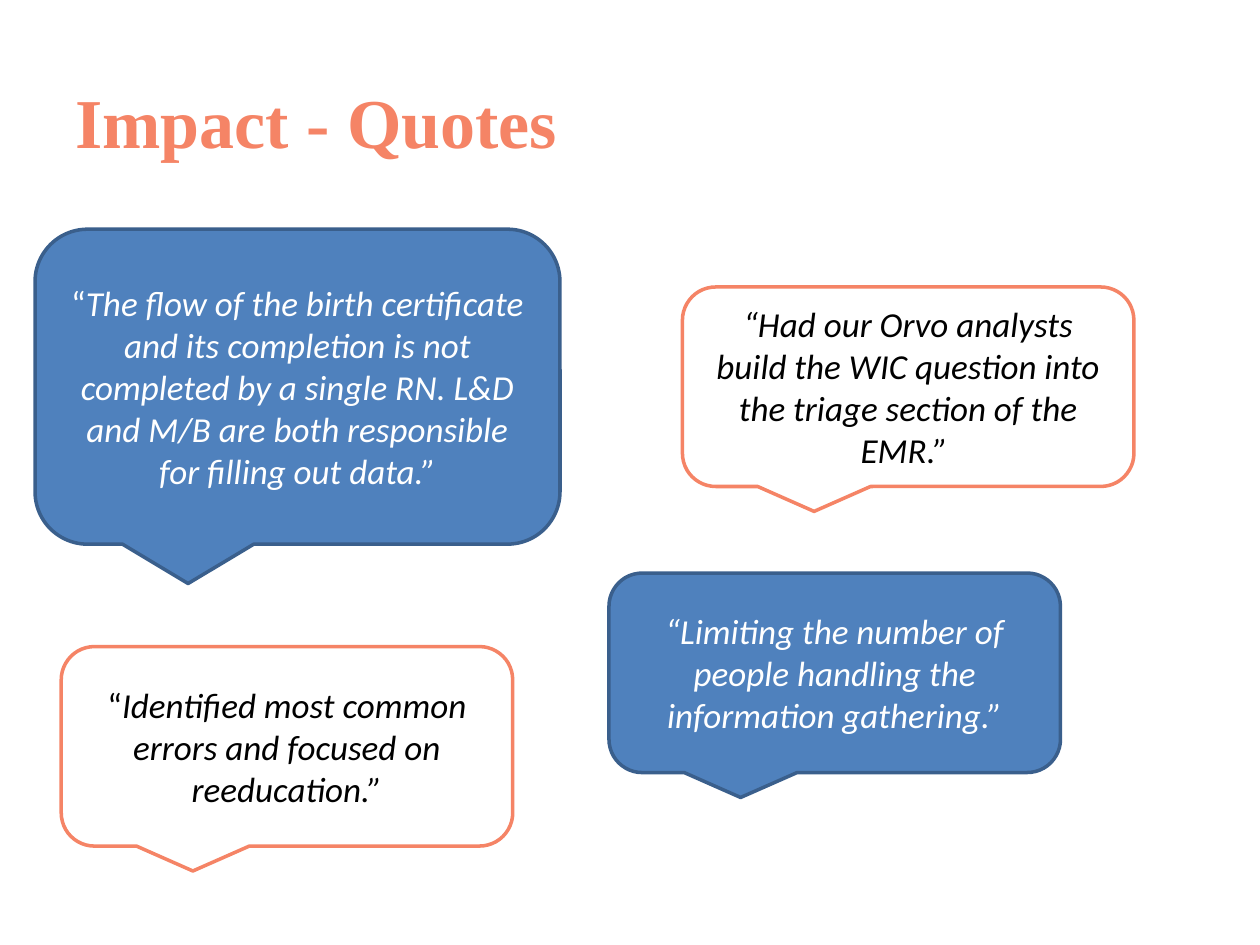
from pptx import Presentation
from pptx.dml.color import RGBColor
from pptx.enum import shapes as sh, text as tx
from pptx.util import Pt

CORAL = "F58466"
PLAIN = ("FFFFFF", CORAL, "000000")
BLUE = ("4F81BD", "3A5F8C", "FFFFFF")
SMALL = (258, 114)
LARGE = (300, 180)

QUOTES = [
    ((35, 369.5), SMALL, PLAIN, "“",
     "Identified most common errors and focused on reeducation.”"),
    ((348, 327.5), SMALL, BLUE, "",
     "“Limiting the number of people handling the information gathering.”"),
    ((390, 164), SMALL, PLAIN, "",
     "“Had our Orvo analysts build the WIC question into the triage section of the EMR.” "),
    ((20, 131), LARGE, BLUE, "“",
     "The flow of the birth certificate and its completion is not completed by a "
     "single RN. L&D and M/B are both responsible for filling out data.”"),
]


def paint(color, code):
    color.rgb = RGBColor.from_string(code)


def style(font, name, size, code):
    font.name = name
    font.size = Pt(size)
    paint(font.color, code)


def add_quote(slide, spot, size, look, mark, words):
    fill, edge, ink = look
    box = slide.shapes.add_shape(sh.MSO_SHAPE.ROUNDED_RECTANGULAR_CALLOUT,
                                 *map(Pt, spot + size))
    box.shadow.inherit = False
    box.fill.solid()
    paint(box.fill.fore_color, fill)
    paint(box.line.color, edge)
    box.line.width = Pt(2)
    frame = box.text_frame
    frame.word_wrap = True
    frame.vertical_anchor = tx.MSO_ANCHOR.MIDDLE
    para = frame.paragraphs[0]
    para.alignment = tx.PP_ALIGN.CENTER
    style(para.font, "Calibri", 20, ink)
    if mark:
        para.add_run().text = mark
    run = para.add_run()
    run.text = words
    run.font.italic = True


def main():
    deck = Presentation()
    deck.slide_width, deck.slide_height = Pt(720), Pt(540)
    slide = deck.slides.add_slide(deck.slide_layouts[5])
    title = slide.shapes.title
    title.left, title.top, title.width, title.height = map(Pt, (36, 24, 648, 90))
    title.text_frame.text = "Impact - Quotes"
    title.text_frame.vertical_anchor = tx.MSO_ANCHOR.MIDDLE
    para = title.text_frame.paragraphs[0]
    para.alignment = tx.PP_ALIGN.LEFT
    style(para.font, "Times New Roman", 40, CORAL)
    para.font.bold = True
    for quote in QUOTES:
        add_quote(slide, *quote)
    deck.save("out.pptx")


if __name__ == "__main__":
    main()
